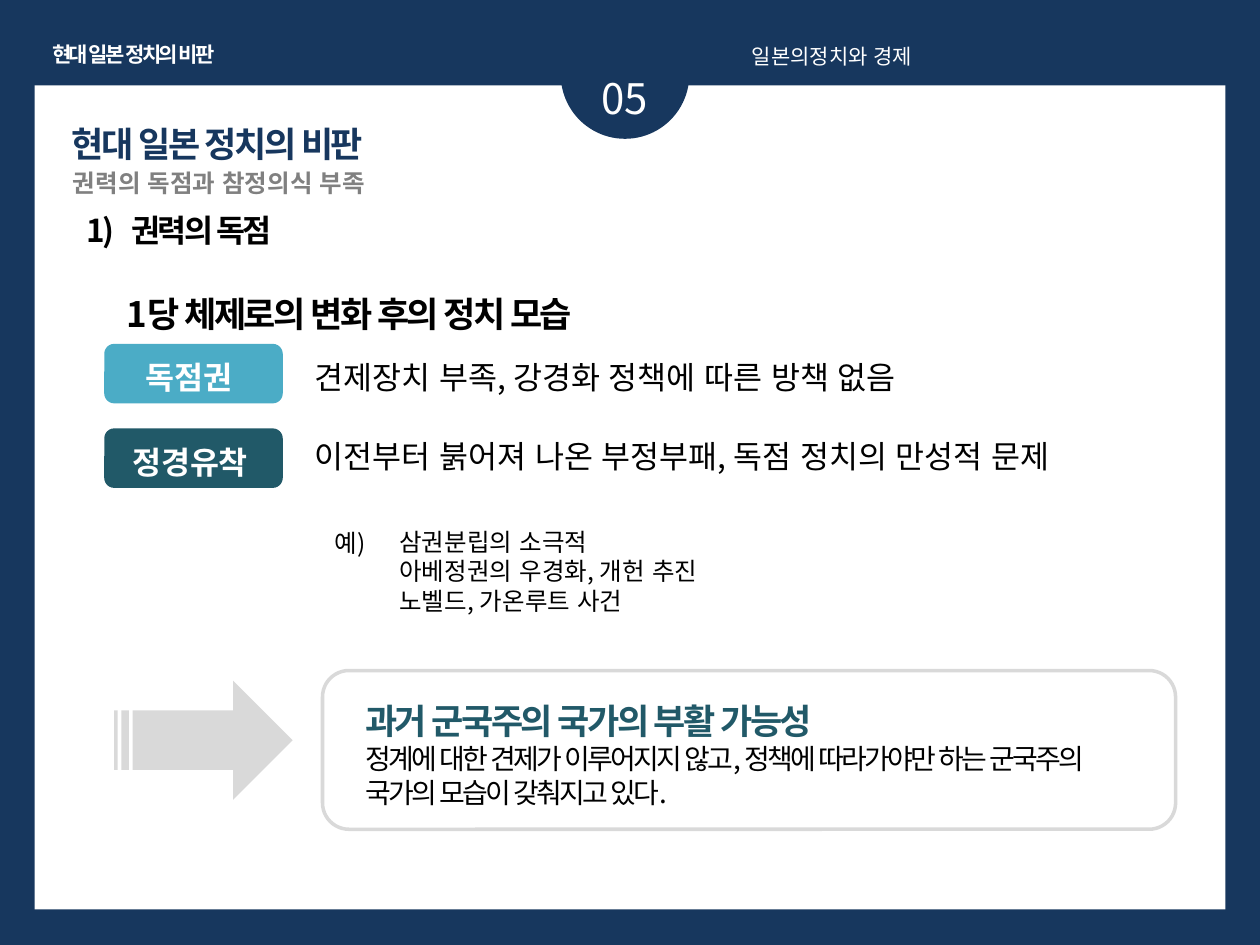
"""Build the slide on criticism of modern Japanese politics."""
from lxml import etree
from pptx import Presentation
from pptx.dml.color import RGBColor
from pptx.enum.shapes import MSO_SHAPE
from pptx.enum.text import MSO_ANCHOR, MSO_AUTO_SIZE, PP_ALIGN
from pptx.oxml.ns import qn
from pptx.util import Pt

RECTANGLE, ROUNDED = MSO_SHAPE.RECTANGLE, MSO_SHAPE.ROUNDED_RECTANGLE
ELLIPSE, STRIPED_ARROW = MSO_SHAPE.OVAL, MSO_SHAPE.STRIPED_RIGHT_ARROW
LEFT, CENTER, JUSTIFY = PP_ALIGN.LEFT, PP_ALIGN.CENTER, PP_ALIGN.JUSTIFY
TOP, FIXED = MSO_ANCHOR.TOP, MSO_AUTO_SIZE.NONE
FONT, TITLE_FONT, HANGUL_FONT = "Noto Sans CJK KR", "Arial", "Arial"
TIGHT = -1.5
COLORS = {
    "navy": "17375E", "white": "FFFFFF", "black": "000000", "teal": "215968",
    "aqua": "4BACC6", "gray": "808080", "silver": "D9D9D9",
}


def color(name):
    """Return the palette colour with this name."""
    return RGBColor.from_string(COLORS[name])


class SlideBuilder:
    """Hold the text style and the current page."""

    def __init__(self, page):
        """Start on a page with a navy background."""
        self.page = page
        page.background.fill.solid()
        page.background.fill.fore_color.rgb = color("navy")

    def shape(self, kind, bounds, fill=None, line=None):
        """Add a flat preset shape."""
        shape = self.page.shapes.add_shape(kind, *map(Pt, bounds))
        shape.shadow.inherit = False
        if fill:
            shape.fill.solid()
            shape.fill.fore_color.rgb = color(fill)
        else:
            shape.fill.background()
        if line:
            shape.line.color.rgb = color(line)
            shape.line.width = Pt(2)
        else:
            shape.line.fill.background()

    def style(self, para, size, ink="black", bold=False, spacing=0,
              align=LEFT, leading=1, hanging=0, font=FONT):
        """Format one paragraph."""
        para.alignment = align
        para.line_spacing = leading
        para.space_before = Pt(0)
        properties = para._p.get_or_add_pPr()
        properties.set("marL", str(Pt(hanging)))
        properties.set("indent", str(-Pt(hanging)))
        etree.SubElement(properties, qn("a:buNone"))
        para.font.size = Pt(size)
        para.font.bold = bold
        para.font.color.rgb = color(ink)
        para.font.name = font
        characters = properties.find(qn("a:defRPr"))
        characters.set("spc", str(int(spacing * 100)))
        etree.SubElement(characters, qn("a:ea"), typeface=HANGUL_FONT)

    def fill_text(self, box, lines, wrap=True, **style):
        """Write equally formatted lines into a box."""
        frame = box.text_frame
        frame.word_wrap = wrap
        frame.auto_size = FIXED
        frame.vertical_anchor = TOP
        frame.text = "\n".join(lines)
        for para in frame.paragraphs:
            self.style(para, **style)

    def text(self, bounds, *lines, **style):
        """Add a text box and return it."""
        box = self.page.shapes.add_textbox(*map(Pt, bounds))
        self.fill_text(box, lines, **style)
        return box

    def placeholder(self, index, bounds, *lines, **style):
        """Move a template placeholder, bring it to the front and fill it."""
        box = next(holder for holder in self.page.placeholders
                   if holder.placeholder_format.idx == index)
        box.left, box.top, box.width, box.height = map(Pt, bounds)
        self.page.shapes._spTree.append(box._element)
        self.fill_text(box, lines, **style)


def main():
    """Draw the slide and save the deck."""
    deck = Presentation()
    deck.slide_width, deck.slide_height = Pt(720), Pt(540)
    slide = SlideBuilder(deck.slides.add_slide(deck.slide_layouts[1]))

    slide.shape(RECTANGLE, (19.8, 48.8, 680.4, 470.8), "white")
    slide.shape(ELLIPSE, (320.4, 5.8, 73.5, 73.5), "navy")
    slide.text((314.6, 37.8, 85, 36), "05", size=24, ink="white", align=CENTER)
    slide.text((17.3, 20, 118, 21.5), "현대 일본 정치의 비판", size=12, ink="white",
               bold=True, spacing=TIGHT, align=CENTER, wrap=False)
    slide.text((422.6, 21.5, 283.5, 21.5), "일본의정치와 경제", size=12,
               ink="white", align=JUSTIFY)

    slide.placeholder(0, (33.8, 66.2, 213, 60.5), "현대 일본 정치의 비판", size=20,
                      ink="navy", bold=True, spacing=TIGHT, font=TITLE_FONT)
    slide.text((34.5, 92.2, 255, 24.5), "권력의 독점과 참정의식 부족", size=14,
               ink="gray", bold=True)
    slide.text((42.5, 116.8, 533, 29), "1)\t권력의 독점", size=18, bold=True,
               spacing=TIGHT, hanging=25.5)
    slide.text((65.5, 139.7, 612, 48), "1당 체제로의 변화 후의 정치 모습", size=20,
               bold=True, spacing=TIGHT, leading=2)

    topics = [
        (196.5, "aqua", "독점권", (76.3, 200.9, 73.5, 29),
         "견제장치 부족, 강경화 정책에 따른 방책 없음", 200.9),
        (244.8, "teal", "정경유착", (68.4, 249.8, 90.7, 29),
         "이전부터 붉어져 나온 부정부패, 독점 정치의 만성적 문제", 246.3),
    ]
    for top, fill, label, label_bounds, detail, detail_top in topics:
        slide.shape(ROUNDED, (59.6, top, 102, 34), fill)
        slide.text(label_bounds, label, size=18, ink="white", bold=True)
        slide.text((172.8, detail_top, 481.5, 29), detail, size=18)

    slide.text((184.3, 298, 51, 24.5), "예)", size=14, spacing=TIGHT)
    slide.placeholder(1, (221, 297.4, 385, 58.3), "삼권분립의 소극적",
                      "아베정권의 우경화, 개헌 추진", "노벨드, 가온루트 사건", size=14)

    slide.shape(STRIPED_ARROW, (65.2, 389, 102, 68), "silver")
    slide.shape(ROUNDED, (184.3, 383.2, 487.5, 90.7), line="silver")
    summary = slide.text((201.6, 372.2, 453.6, 94.3), "과거 군국주의 국가의 부활 가능성",
                         size=20, ink="teal", bold=True, spacing=TIGHT, leading=2)
    para = summary.text_frame.add_paragraph()
    para.text = ("정계에 대한 견제가 이루어지지 않고, 정책에 따라가야만 하는 군국주의 "
                 "국가의 모습이 갖춰지고 있다.")
    slide.style(para, 16, spacing=TIGHT)

    deck.save("out.pptx")


if __name__ == "__main__":
    main()
